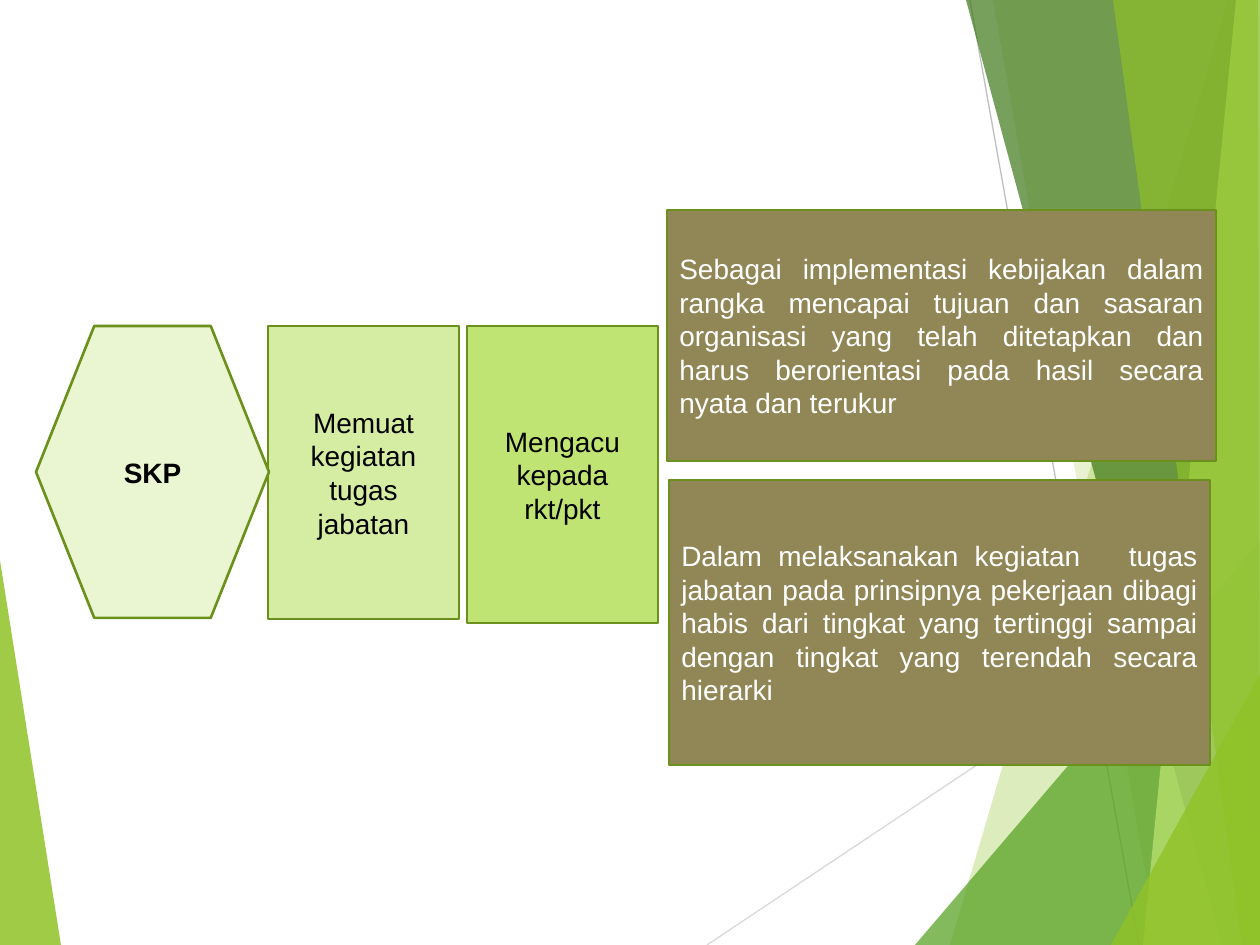
from dataclasses import dataclass

from lxml.etree import SubElement
from pptx import Presentation
from pptx.dml.color import RGBColor
from pptx.enum.shapes import MSO_CONNECTOR as Connector, MSO_SHAPE as Shape
from pptx.enum.text import MSO_ANCHOR as Anchor, PP_ALIGN as Align
from pptx.oxml.ns import qn
from pptx.util import Pt

EMU_PER_PX = 914400 / 126
WIDTH, HEIGHT = 1260, 945


@dataclass(frozen=True)
class Theme:
    """Colours, font and sizes of the slide."""
    font: str = "Arial"
    text_size: float = 16
    outline_width: float = 1.5
    ray_width: float = 0.75
    outline: str = "6B901C"
    lime: str = "90C226"
    green: str = "54A021"
    forest: str = "3F7819"
    pale: str = "EAF6D1"
    soft: str = "D5EDA2"
    bright: str = "C0E474"
    olive: str = "918655"
    dark_text: str = "000000"
    light_text: str = "FFFFFF"
    light_ray: str = "D9D9D9"
    dark_ray: str = "BFBFBF"


THEME = Theme()

FACETS = [
    ([(0, 560), (61, 945), (0, 945)], THEME.lime, 85),
    ([(1228, 0), (950, 945), (1260, 945), (1260, 0)], THEME.lime, 30),
    ([(993, 0), (1158, 945), (1260, 945), (1260, 0)], THEME.lime, 20),
    ([(915, 945), (1260, 541), (1260, 945)], THEME.green, 72),
    ([(966, 0), (1222, 945), (1260, 945), (1260, 0)], THEME.forest, 70),
    ([(1236, 0), (1143, 945), (1260, 945), (1260, 0)], THEME.bright, 70),
    ([(1113, 0), (1242, 945), (1260, 945), (1258, 0)], THEME.lime, 65),
    ([(1111, 945), (1260, 674), (1260, 945)], THEME.lime, 80),
]
RAYS = [
    ((707, 945), (1260, 576), THEME.light_ray),
    ((970, 0), (1139, 945), THEME.dark_ray),
]
STEPS = [
    ("Memuat kegiatan tugas jabatan", (268, 326, 191, 293), THEME.soft),
    ("Mengacu kepada rkt/pkt", (467, 326, 191, 297), THEME.bright),
]
DETAILS = [
    ("Sebagai implementasi kebijakan dalam rangka mencapai tujuan dan sasaran "
     "organisasi yang telah ditetapkan dan harus berorientasi pada hasil secara "
     "nyata dan terukur", (667, 210, 549, 251)),
    ("Dalam melaksanakan kegiatan   tugas jabatan pada prinsipnya pekerjaan "
     "dibagi habis dari tingkat yang tertinggi sampai dengan tingkat yang "
     "terendah secara hierarki", (669, 480, 541, 285)),
]


def px(*lengths):
    """Turn pixel lengths into a list of EMU."""
    return [round(length * EMU_PER_PX) for length in lengths]


def set_fill(shape, color):
    """Give a shape a flat fill without a shadow."""
    shape.shadow.inherit = False
    shape.fill.solid()
    shape.fill.fore_color.rgb = RGBColor.from_string(color)


def write_text(shape, text, color=THEME.dark_text, align=Align.CENTER, bold=False):
    """Write one vertically centred paragraph into a shape."""
    frame = shape.text_frame
    frame.word_wrap = True
    frame.vertical_anchor = Anchor.MIDDLE
    paragraph = frame.paragraphs[0]
    paragraph.alignment = align
    run = paragraph.add_run()
    run.text = text
    run.font.name = THEME.font
    run.font.size = Pt(THEME.text_size)
    run.font.bold = bold
    run.font.color.rgb = RGBColor.from_string(color)


def add_facet(slide, points, color, opacity):
    """Draw a translucent polygon of the backdrop."""
    start, *others = points
    builder = slide.shapes.build_freeform(*start, scale=EMU_PER_PX)
    builder.add_line_segments(others, close=True)
    shape = builder.convert_to_shape()
    set_fill(shape, color)
    shape.line.fill.background()
    color_element = shape.element.spPr.find(qn("a:solidFill"))[0]
    SubElement(color_element, qn("a:alpha"), val=str(opacity * 1000))


def add_ray(slide, start, end, color):
    """Draw a thin straight line of the backdrop."""
    connector = slide.shapes.add_connector(Connector.STRAIGHT, *px(*start, *end))
    connector.line.color.rgb = RGBColor.from_string(color)
    connector.line.width = Pt(THEME.ray_width)
    SubElement(connector.element.spPr, qn("a:effectLst"))


def add_box(slide, text, bounds, fill, kind=Shape.RECTANGLE, **text_format):
    """Draw an outlined shape holding text."""
    shape = slide.shapes.add_shape(kind, *px(*bounds))
    set_fill(shape, fill)
    shape.line.color.rgb = RGBColor.from_string(THEME.outline)
    shape.line.width = Pt(THEME.outline_width)
    write_text(shape, text, **text_format)


def add_backdrop(slide):
    """Draw the facets, with the rays above the first one."""
    left_facet, *right_facets = FACETS
    add_facet(slide, *left_facet)
    for ray in RAYS:
        add_ray(slide, *ray)
    for facet in right_facets:
        add_facet(slide, *facet)


def main():
    """Build and save the slide."""
    presentation = Presentation()
    presentation.slide_width, presentation.slide_height = px(WIDTH, HEIGHT)
    slide = presentation.slides.add_slide(presentation.slide_layouts[6])
    add_backdrop(slide)
    for text, bounds, fill in STEPS:
        add_box(slide, text, bounds, fill)
    for text, bounds in DETAILS:
        add_box(slide, text, bounds, THEME.olive,
                color=THEME.light_text, align=Align.JUSTIFY)
    add_box(slide, "SKP", (36, 326, 233, 292), THEME.pale, Shape.HEXAGON, bold=True)
    presentation.save("out.pptx")


if __name__ == "__main__":
    main()
